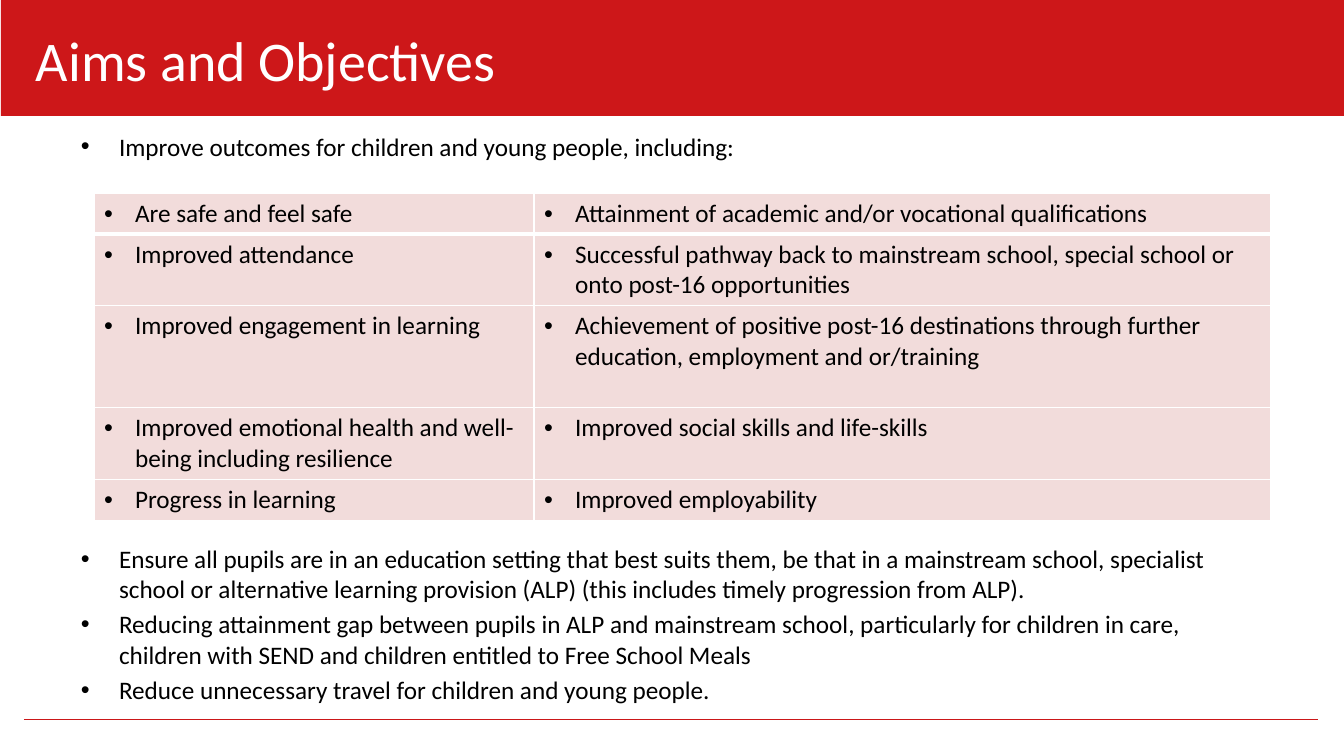
from dataclasses import dataclass

from lxml.etree import SubElement
from pptx import Presentation
from pptx.dml.color import RGBColor as Rgb
from pptx.enum.shapes import MSO_CONNECTOR as Link, MSO_SHAPE as Kind
from pptx.enum.text import MSO_ANCHOR as Anchor, MSO_AUTO_SIZE as Fit, PP_ALIGN as Align
from pptx.oxml.ns import qn
from pptx.util import Emu, Pt

# Content
TITLE = "Aims and Objectives"
LEAD = "Improve outcomes for children and young people, including:"
OUTCOMES = [
    ("Are safe and feel safe",
     "Attainment of academic and/or vocational qualifications"),
    ("Improved attendance",
     "Successful pathway back to mainstream school, special school or onto post-16 opportunities"),
    ("Improved engagement in learning",
     "Achievement of positive post-16 destinations through further education, employment and or/training"),
    ("Improved emotional health and well-being including resilience",
     "Improved social skills and life-skills"),
    ("Progress in learning", "Improved employability"),
]
AIMS = [
    "Ensure all pupils are in an education setting that best suits them, be that in a mainstream school, "
    "specialist school or alternative learning provision (ALP) (this includes timely progression from ALP).",
    "Reducing attainment gap between pupils in ALP and mainstream school, particularly for children in care, "
    "children with SEND and children entitled to Free School Meals",
    "Reduce unnecessary travel for children and young people.",
]


@dataclass(frozen=True)
class Theme:
    font: str = "Calibri"
    red: str = "CD1719"
    rule: str = "CB1719"
    pink: str = "F2DCDB"
    white: str = "FFFFFF"
    black: str = "000000"
    head: int = 40
    text: int = 18


theme = Theme()

# Layout in px
WIDE, HIGH = 1344, 756
BAND = (1, 0, WIDE, 116)
HEAD = (26, 21, 1027, 80)
BODY = (72, 126, 1199, 522)
GRID = (94, 193)
COLS = (440, 737)
ROWS = (41, 71, 102, 72, 41)
RULE = (24, 719, 1318, 719)
GAP = 382  # room for the table between the lead and the aims


def px(n):
    return Emu(round(n * 914400 / 100.8))


def place(shape, box):
    shape.left, shape.top, shape.width, shape.height = map(px, box)


def write(par, text, size, color):
    run = par.add_run()
    run.text = text
    run.font.name, run.font.size = theme.font, Pt(size)
    run.font.color.rgb = Rgb.from_string(color)


def bullet(par, text, indent):
    par.alignment = Align.LEFT
    props = par._p.get_or_add_pPr()
    props.set("marL", str(px(indent)))
    props.set("indent", str(-px(indent)))
    SubElement(props, qn("a:buFont"), typeface="Arial")
    SubElement(props, qn("a:buChar"), char="•")
    write(par, text, theme.text, theme.black)


def edge(cell, side, width):
    line = SubElement(cell._tc.get_or_add_tcPr(), qn(f"a:ln{side}"), w=str(Pt(width)))
    fill = SubElement(line, qn("a:solidFill"))
    SubElement(fill, qn("a:srgbClr"), val=theme.white)


def frame(shape, inset):
    text = shape.text_frame
    text.word_wrap, text.auto_size = True, Fit.NONE
    text.vertical_anchor = Anchor.TOP
    text.margin_left = text.margin_right = px(inset)
    text.margin_top = text.margin_bottom = px(5)
    return text


def main():
    deck = Presentation()
    deck.slide_width, deck.slide_height = px(WIDE), px(HIGH)
    slide = deck.slides.add_slide(deck.slide_layouts[1])
    shapes = slide.shapes
    title, body = slide.placeholders

    # Red band and footer rule, behind the text
    band = shapes.add_shape(Kind.RECTANGLE, *map(px, BAND))
    band.shadow.inherit = False
    band.fill.solid()
    band.fill.fore_color.rgb = Rgb.from_string(theme.red)
    band.line.fill.background()
    rule = shapes.add_connector(Link.STRAIGHT, *map(px, RULE))
    rule.line.color.rgb = Rgb.from_string(theme.rule)
    rule.line.width = Pt(0.25)
    SubElement(rule.element.spPr, qn("a:effectLst"))
    for part in (band, rule):
        title.element.addprevious(part.element)

    # Title
    place(title, HEAD)
    par = frame(title, 10).paragraphs[0]
    par.alignment = Align.LEFT
    write(par, TITLE, theme.head, theme.white)

    # Lead and aims
    place(body, BODY)
    text = frame(body, 9)
    bullet(text.paragraphs[0], LEAD, 38)
    for i, aim in enumerate(AIMS):
        par = text.add_paragraph()
        par.space_before = Pt(theme.text * 0.2) if i else px(GAP)
        bullet(par, aim, 38)

    # Outcomes table
    size = (sum(COLS), sum(ROWS))
    table = shapes.add_table(len(ROWS), len(COLS), *map(px, GRID + size)).table
    table.first_row = table.horz_banding = False
    for col, width in zip(table.columns, COLS):
        col.width = px(width)
    for r, (row, pair) in enumerate(zip(table.rows, OUTCOMES)):
        row.height = px(ROWS[r])
        for cell, item in zip(row.cells, pair):
            bullet(cell.text_frame.paragraphs[0], item, 31)
            for side in "LRTB":
                thick = (r, side) in ((0, "B"), (1, "T"))
                edge(cell, side, 3 if thick else 1)
            cell.fill.solid()
            cell.fill.fore_color.rgb = Rgb.from_string(theme.pink)

    deck.save("out.pptx")


if __name__ == "__main__":
    main()
